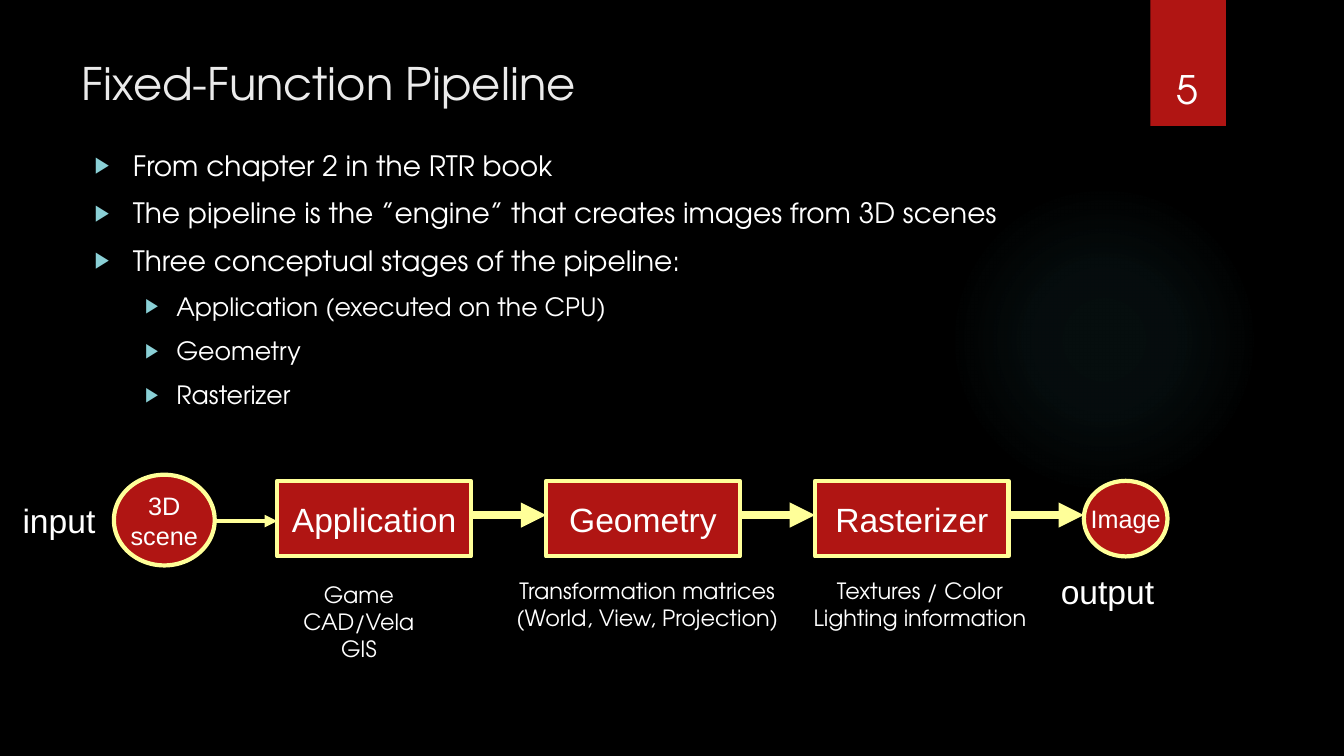
from pptx import Presentation
from pptx.dml.color import RGBColor
from pptx.enum.shapes import MSO_CONNECTOR, MSO_SHAPE
from pptx.enum.text import MSO_ANCHOR, PP_ALIGN
from pptx.oxml import parse_xml
from pptx.oxml.ns import nsdecls, qn
from pptx.util import Inches, Pt
from lxml import etree

RECT, OVAL = MSO_SHAPE.RECTANGLE, MSO_SHAPE.OVAL
LINE = MSO_CONNECTOR.STRAIGHT
TOP, MID, BASE = MSO_ANCHOR.TOP, MSO_ANCHOR.MIDDLE, MSO_ANCHOR.BOTTOM
LEFT, MIDDLE = PP_ALIGN.LEFT, PP_ALIGN.CENTER

BLACK = RGBColor(0, 0, 0)
WHITE = RGBColor(255, 255, 255)
PALE = RGBColor(0xEB, 0xEB, 0xEB)
RED = RGBColor(0xB0, 0x15, 0x13)
YELLOW = RGBColor(0xFF, 0xFF, 0x99)
TEAL = RGBColor(0x8A, 0xD0, 0xD6)
GLOW = RGBColor(0x50, 0xB9, 0xC1)
HEAD, PLAIN = "TeX Gyre Adventor", "Arial"

# Content
TITLE = "Fixed-Function Pipeline"
NUMBER = "5"
POINTS = [
    (0, "From chapter 2 in the RTR book"),
    (0, "The pipeline is the ”engine” that creates images from 3D scenes"),
    (0, "Three conceptual stages of the pipeline:"),
    (1, "Application (executed on the CPU)"),
    (1, "Geometry"),
    (1, "Rasterizer"),
]
LEVELS = [(20, 0.38, 0.38), (18, 0.81, 0.31)]  # size, margin, hanging indent
STAGES = ["Application", "Geometry", "Rasterizer"]
ENDS = [  # lines, box
    (["3D", "scene"], (1.13, 4.71, 1, 0.9)),
    (["Image"], (10.75, 4.77, 0.83, 0.75)),
]
LABELS = [("input", (0.12, 4.91, 0.93, 0.5)),
          ("output", (10.42, 5.61, 1.13, 0.5))]
NOTES = [
    (["Game", "CAD/Vela", "GIS"], (1.71, 5.72, 3.7, 0.91)),
    (["Transformation matrices", "(World, View, Projection)"],
     (4.57, 5.68, 3.7, 0.64)),
    (["Textures / Color", "Lighting information"], (7.71, 5.68, 2.83, 0.64)),
]
STOPS = [(0, 7), (36, 6), (69, 0)]  # place and opacity in percent

# Stage row
FIRST, STEP, WIDE, HIGH, ROW = 2.75, 8 / 3, 1.92, 0.75, 4.77

prs = Presentation()
prs.slide_width, prs.slide_height = Inches(13.33), Inches(7.5)
slide = prs.slides.add_slide(prs.slide_layouts[5])
slide.background.fill.solid()
slide.background.fill.fore_color.rgb = BLACK
shapes = slide.shapes


def inches(box):
    return [Inches(v) for v in box]


def add_run(para, text, size, font, color=WHITE):
    run = para.add_run()
    run.text = text
    run.font.size, run.font.name = Pt(size), font
    run.font.color.rgb = color


def write(shape, lines, size, font, align=MIDDLE, anchor=TOP,
          wrap=True, color=WHITE):
    frame = shape.text_frame
    frame.word_wrap, frame.vertical_anchor = wrap, anchor
    for i, text in enumerate(lines):
        para = frame.add_paragraph() if i else frame.paragraphs[0]
        para.alignment = align
        add_run(para, text, size, font, color)


def add_form(kind, box, fill, line=None):
    shape = shapes.add_shape(kind, *inches(box))
    shape.shadow.inherit = False
    shape.fill.solid()
    shape.fill.fore_color.rgb = fill
    if line is None:
        shape.line.fill.background()
    else:
        shape.line.color.rgb, shape.line.width = line, Pt(3)
    return shape


def add_arrow(start, end, y, width):
    arrow = shapes.add_connector(LINE, *inches((start, y, end, y)))
    arrow.line.color.rgb, arrow.line.width = YELLOW, Pt(width)
    ln = arrow.line._get_or_add_ln()
    etree.SubElement(ln, qn("a:tailEnd"), type="triangle")
    etree.SubElement(arrow._element.spPr, qn("a:effectLst"))


def add_bullet(para, level):
    size, margin, hang = LEVELS[level]
    props = para._p.get_or_add_pPr()
    props.set("marL", str(Inches(margin)))
    props.set("indent", str(-Inches(hang)))
    color = etree.SubElement(props, qn("a:buClr"))
    etree.SubElement(color, qn("a:srgbClr"), val=str(TEAL))
    etree.SubElement(props, qn("a:buSzPct"), val="80000")
    etree.SubElement(props, qn("a:buFont"), typeface=PLAIN)
    etree.SubElement(props, qn("a:buChar"), char="▶")
    return size


# Soft glow and number ribbon
glow = add_form(OVAL, (9.41, 1.83, 3.08, 3.08), GLOW)
stops = "".join(
    f'<a:gs pos="{at * 1000}"><a:srgbClr val="{GLOW}">'
    f'<a:alpha val="{alpha * 1000}"/></a:srgbClr></a:gs>'
    for at, alpha in STOPS)
fade = parse_xml(
    f'<a:gradFill {nsdecls("a")} rotWithShape="1"><a:gsLst>{stops}</a:gsLst>'
    '<a:path path="circle"><a:fillToRect l="50000" t="50000" r="50000" '
    'b="50000"/></a:path></a:gradFill>')
props = glow._element.spPr
props.replace(props.find(qn("a:solidFill")), fade)
add_form(RECT, (11.41, 0, 0.75, 1.25), RED)

# Title
title = shapes.title
title.left, title.top, title.width, title.height = inches(
    (0.71, 0.5, 10.29, 1.53))
write(title, [TITLE], 32, HEAD, LEFT, color=PALE)

# Bullet points
body = shapes.add_textbox(*inches((0.84, 1.42, 10.58, 3.36))).text_frame
body.word_wrap = True
for i, (level, text) in enumerate(POINTS):
    para = body.add_paragraph() if i else body.paragraphs[0]
    para.level = level
    para.space_before = Pt(10 if i else 0)
    size = add_bullet(para, level)
    add_run(para, text, size, HEAD)

# Pipeline stages with an arrow after each
for i, name in enumerate(STAGES):
    x = FIRST + i * STEP
    stage = add_form(RECT, (x, ROW, WIDE, HIGH), RED, YELLOW)
    write(stage, [name], 24, PLAIN, anchor=MID, wrap=False)
    add_arrow(x + WIDE, x + STEP, 5.11, 6)

# Input and output
for lines, box in ENDS:
    end = add_form(OVAL, box, RED, YELLOW)
    write(end, lines, 18, PLAIN, anchor=MID, wrap=False)
add_arrow(2.13, FIRST, 5.17, 3)
for text, box in LABELS:
    write(shapes.add_textbox(*inches(box)), [text], 24, PLAIN, wrap=False)

# Notes under the stages
for lines, box in NOTES:
    write(shapes.add_textbox(*inches(box)), lines, 16, HEAD)

# Slide number
number = shapes.add_textbox(*inches((11.32, 0.32, 0.92, 0.84)))
write(number, [NUMBER], 28, HEAD, anchor=BASE)

prs.save("out.pptx")
